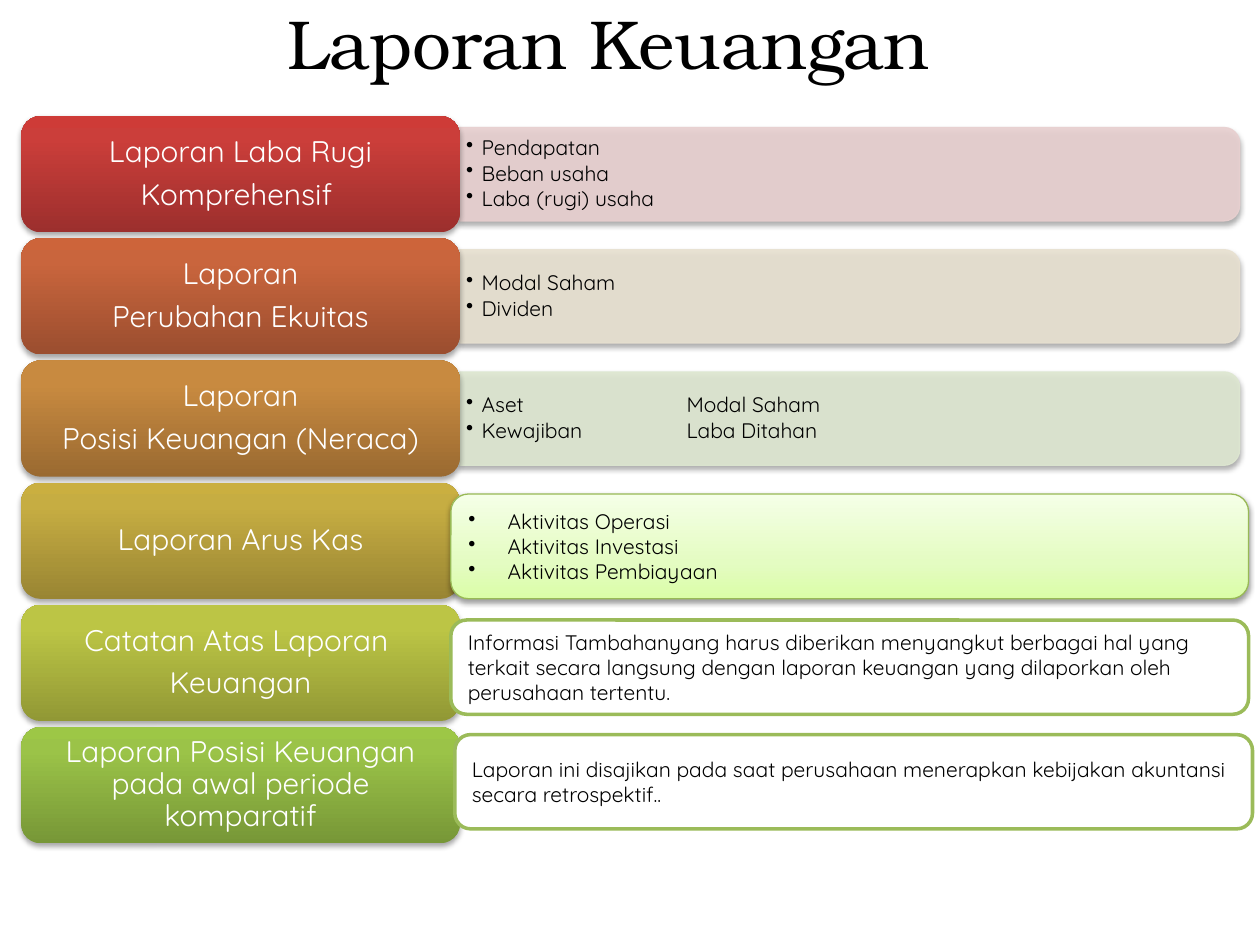
from collections import namedtuple
from dataclasses import dataclass

from lxml.etree import SubElement
from pptx import Presentation
from pptx.dml.color import RGBColor
from pptx.enum.shapes import MSO_SHAPE as Preset
from pptx.enum.text import MSO_ANCHOR as Anchor, PP_ALIGN as Align
from pptx.oxml.ns import qn
from pptx.util import Cm, Pt

Box = namedtuple("Box", "left top width height")


@dataclass(frozen=True)
class Theme:
    """Colours, fonts and type sizes of the slide."""
    ink: str = "000000"
    paper: str = "FFFFFF"
    accent: str = "9BBB59"
    mint_line: str = "98B955"
    mint: tuple = ((0, "DAFDA7"), (35, "E4FCC2"), (100, "F5FFE7"))
    display: str = "TeX Gyre Bonum"
    body: str = "Quicksand"
    title_size: float = 39.6
    label_size: float = 17
    body_size: float = 12


THEME = Theme()

STATEMENTS = [
    (["Laporan Laba Rugi", "Komprehensif "], ("9C2F2D", "CB3E3A", "CE3B37"),
     "E8D0D0", ["Pendapatan", "Beban usaha", "Laba (rugi) usaha"]),
    (["Laporan", "Perubahan Ekuitas"], ("9B4E2F", "C9653D", "CD643A"),
     "E8E1D1", ["Modal Saham", "Dividen"]),
    (["Laporan", "Posisi Keuangan (Neraca)"], ("9A6A31", "C88A40", "CB8B3D"),
     "DEE7D1", ["Aset\t\t\tModal Saham", "Kewajiban\t\tLaba Ditahan"]),
    (["Laporan Arus Kas"], ("998533", "C6AD42", "CAAF40"), None, []),
    (["Catatan Atas Laporan ", "Keuangan"], ("919835", "BCC545", "BFC843"), None, []),
    (["Laporan Posisi Keuangan pada awal periode komparatif"],
     ("779737", "9BC348", "9DC746"), None, []),
]
CASH_FLOWS = ["Aktivitas Operasi", "Aktivitas Investasi", "Aktivitas Pembiayaan"]
NOTES_TEXT = ("Informasi Tambahanyang harus diberikan menyangkut berbagai hal yang "
              "terkait secara langsung dengan laporan keuangan yang dilaporkan oleh "
              "perusahaan tertentu.")
OPENING_TEXT = ("Laporan ini disajikan pada saat perusahaan menerapkan kebijakan "
                "akuntansi secara retrospektif..")


def rgb(value):
    """Turn a hex string into a colour."""
    return RGBColor.from_string(value)


def emu(box):
    """Turn a box in centimetres into slide lengths."""
    return [Cm(length) for length in box]


def set_alpha(fill_parent, percent):
    """Make the solid colour below an element partly transparent."""
    colour = fill_parent.find(qn("a:solidFill")).find(qn("a:srgbClr"))
    SubElement(colour, qn("a:alpha"), val=str(percent * 1000))


def set_gradient(shape, stops):
    """Fill a shape with colour stops that run from bottom to top."""
    shape.fill.gradient()
    shape.fill.gradient_angle = 90
    stop_list = shape._element.spPr.find(qn("a:gradFill")).find(qn("a:gsLst"))
    for old in list(stop_list):
        stop_list.remove(old)
    for percent, colour in stops:
        stop = SubElement(stop_list, qn("a:gs"), pos=str(percent * 1000))
        SubElement(stop, qn("a:srgbClr"), val=colour)


def set_shadow(shape, alpha=35, distance=1.8):
    """Drop a soft black shadow straight down."""
    effects = shape._element.spPr.find(qn("a:effectLst"))
    shadow = SubElement(effects, qn("a:outerShdw"), blurRad=str(Pt(3.1)),
                        dist=str(Pt(distance)), dir="5400000", rotWithShape="0")
    colour = SubElement(shadow, qn("a:srgbClr"), val=THEME.ink)
    SubElement(colour, qn("a:alpha"), val=str(alpha * 1000))


def add_preset(slide, preset, box, line=None, weight=0.75):
    """Add a preset shape without shadow and with an optional outline."""
    shape = slide.shapes.add_shape(preset, *emu(box))
    shape.shadow.inherit = False
    if line:
        shape.line.color.rgb = rgb(line)
        shape.line.width = Pt(weight)
    else:
        shape.line.fill.background()
    return shape


def write(shape, lines, size, colour=THEME.ink, font=THEME.body, insets=(0.25, 0.13),
          bullet_indent=None, **paragraph_format):
    """Write one paragraph a line, centred vertically, with shared formats."""
    frame = shape.text_frame
    across, down = map(Cm, insets)
    frame_format = {"word_wrap": True, "vertical_anchor": Anchor.MIDDLE,
                    "margin_left": across, "margin_right": across,
                    "margin_top": down, "margin_bottom": down}
    for name, value in frame_format.items():
        setattr(frame, name, value)
    paragraph_format = {"alignment": Align.LEFT, **paragraph_format}
    for index, line in enumerate(lines):
        paragraph = frame.add_paragraph() if index else frame.paragraphs[0]
        for name, value in paragraph_format.items():
            setattr(paragraph, name, value)
        run = paragraph.add_run()
        run.text = line
        for name, value in {"size": Pt(size), "name": font}.items():
            setattr(run.font, name, value)
        run.font.color.rgb = rgb(colour)
        if bullet_indent:
            properties = paragraph._p.get_or_add_pPr()
            indent = Cm(bullet_indent)
            for name, value in {"marL": indent, "indent": -indent,
                                "defTabSz": Cm(1.48)}.items():
                properties.set(name, str(value))
            SubElement(properties, qn("a:buChar"), char="•")


def add_title(slide, box):
    """Place the slide title."""
    title = slide.shapes.add_textbox(*emu(box))
    write(title, ["Laporan Keuangan"], THEME.title_size, font=THEME.display,
          alignment=Align.CENTER)


def add_panel(slide, box, colour, items):
    """Place a pale panel, rounded on its right, with its bullet list."""
    turned = Box(box.left + (box.width - box.height) / 2,
                 box.top + (box.height - box.width) / 2, box.height, box.width)
    panel = add_preset(slide, Preset.ROUND_2_SAME_RECTANGLE, turned, line=colour)
    panel.rotation = 90
    panel.fill.solid()
    panel.fill.fore_color.rgb = rgb(colour)
    properties = panel._element.spPr
    for fill_parent in (properties, properties.find(qn("a:ln"))):
        set_alpha(fill_parent, 90)
    set_shadow(panel)
    text_area = Box(box.left, box.top + 0.09, box.width - 0.1, box.height - 0.18)
    write(slide.shapes.add_textbox(*emu(text_area)), items, THEME.body_size,
          insets=(0.13, 0.08), bullet_indent=0.31, line_spacing=0.9,
          space_after=Pt(THEME.body_size * 0.15))


def add_label(slide, box, lines, shades):
    """Place the coloured name of one statement."""
    label = add_preset(slide, Preset.ROUNDED_RECTANGLE, box)
    set_gradient(label, zip((0, 80, 100), shades))
    set_shadow(label)
    write(label, lines, THEME.label_size, THEME.paper, insets=(0.28, 0.2),
          alignment=Align.CENTER, line_spacing=0.9,
          space_after=Pt(THEME.label_size * 0.35))


def add_statements(slide, box):
    """Stack the statements in equal rows, each a label and maybe a panel."""
    label_width, gap, inset = 8.84, 0.12, 0.23
    pitch = (box.height + gap) / len(STATEMENTS)
    for row, (lines, shades, tint, items) in enumerate(STATEMENTS):
        label_box = Box(box.left, box.top + row * pitch, label_width, pitch - gap)
        if items:
            panel_box = Box(box.left + label_width, label_box.top + inset,
                            box.width - label_width, label_box.height - 2 * inset)
            add_panel(slide, panel_box, tint, items)
        add_label(slide, label_box, lines, shades)


def add_cash_card(slide, box):
    """Place the green card with the cash flow activities."""
    card = add_preset(slide, Preset.ROUNDED_RECTANGLE, box, line=THEME.mint_line)
    set_gradient(card, THEME.mint)
    set_shadow(card, alpha=38, distance=1.6)
    write(card, CASH_FLOWS, THEME.body_size, bullet_indent=0.79)


def add_note_card(slide, box, text):
    """Place a white outlined card with one paragraph."""
    card = add_preset(slide, Preset.ROUNDED_RECTANGLE, box, line=THEME.accent, weight=2)
    card.fill.solid()
    card.fill.fore_color.rgb = rgb(THEME.paper)
    write(card, [text], THEME.body_size)


def main():
    """Build the slide and save it."""
    deck = Presentation()
    deck.slide_width, deck.slide_height = Cm(25.4), Cm(19.05)
    slide = deck.slides.add_slide(deck.slide_layouts[6])
    add_title(slide, Box(0.84, 0, 22.86, 1.7))
    add_statements(slide, Box(0.43, 2.34, 24.56, 14.66))
    add_cash_card(slide, Box(9.09, 9.96, 16.08, 2.11))
    add_note_card(slide, Box(9.09, 12.5, 16.08, 1.9), NOTES_TEXT)
    add_note_card(slide, Box(9.17, 14.81, 16.08, 1.9), OPENING_TEXT)
    deck.save("out.pptx")


if __name__ == "__main__":
    main()
